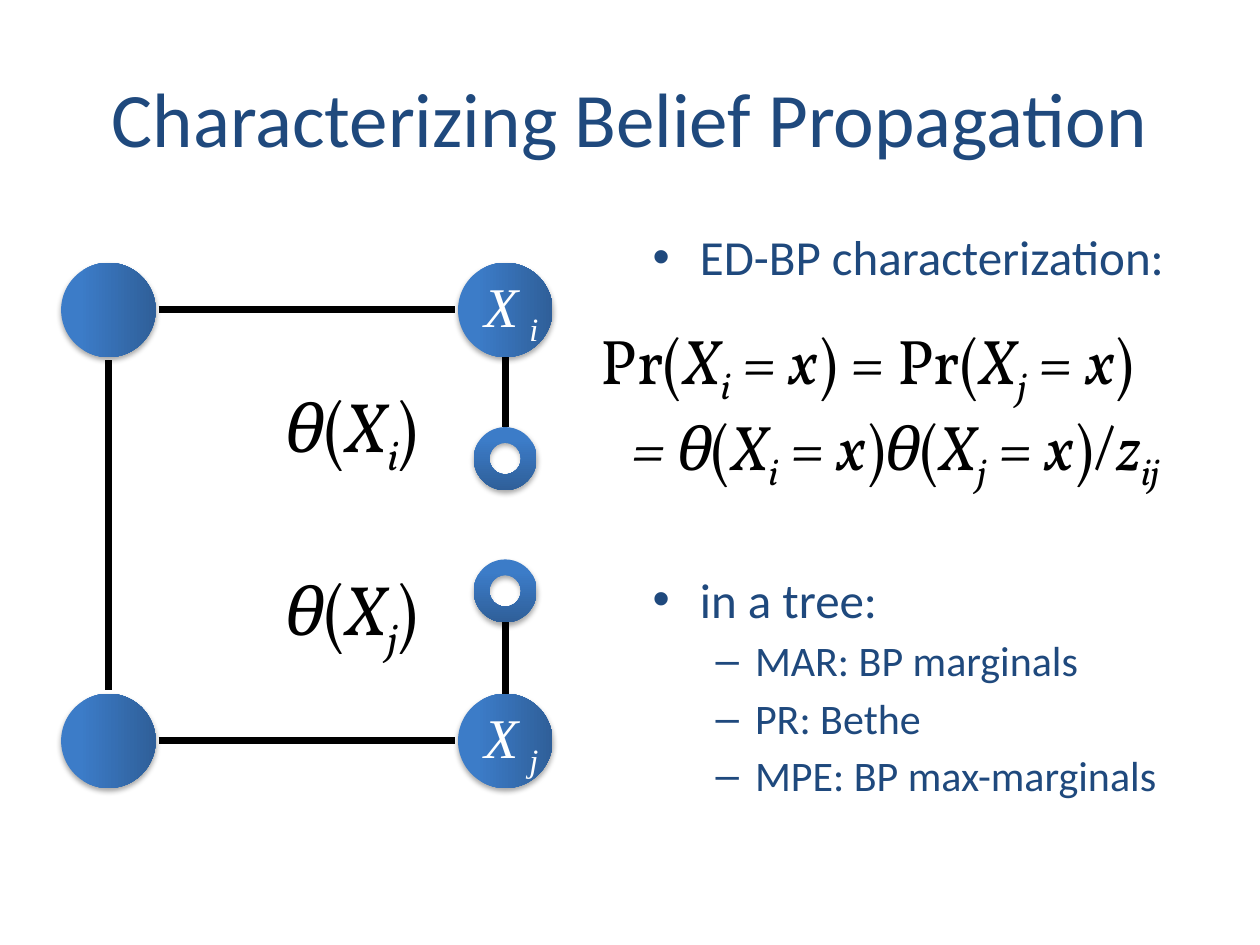
from dataclasses import dataclass

from lxml import etree
from pptx import Presentation
from pptx.dml.color import RGBColor
from pptx.enum.shapes import MSO_CONNECTOR, MSO_SHAPE
from pptx.enum.text import MSO_ANCHOR, MSO_AUTO_SIZE, PP_ALIGN
from pptx.oxml import parse_xml
from pptx.oxml.ns import qn
from pptx.util import Inches, Pt

STRAIGHT = MSO_CONNECTOR.STRAIGHT
ELLIPSE, DONUT = MSO_SHAPE.OVAL, MSO_SHAPE.DONUT
CENTER, MIDDLE = PP_ALIGN.CENTER, MSO_ANCHOR.MIDDLE
ROMAN, ITALIC, SUBSCRIPT = "roman", "italic", "subscript"


@dataclass(frozen=True)
class Theme:
    heading: RGBColor = RGBColor(0x1F, 0x49, 0x7D)
    ink: RGBColor = RGBColor(0, 0, 0)
    light: RGBColor = RGBColor(0xFF, 0xFF, 0xFF)
    node_bright: RGBColor = RGBColor(0x3C, 0x7C, 0xC8)
    node_dark: RGBColor = RGBColor(0x2F, 0x5F, 0x99)
    text_font: str = "Calibri"
    node_font: str = "Times New Roman"
    math_font: str = "Vollkorn"
    title_size: int = 44
    list_sizes: tuple = (28, 24)
    node_size: int = 32
    potential_size: int = 40
    equation_size: int = 36
    line_width: int = 4


theme = Theme()
SHADOW = (
    '<a:outerShdw xmlns:a="http://schemas.openxmlformats.org/drawingml/2006/main" '
    'blurRad="40000" dist="23000" dir="5400000" rotWithShape="0">'
    '<a:srgbClr val="000000"><a:alpha val="35000"/></a:srgbClr></a:outerShdw>'
)


def write(paragraph, text, size, font, color, style=ROMAN, spacing=0):
    run = paragraph.add_run()
    run.text = text
    run.font.size = Pt(size)
    run.font.name = font
    run.font.color.rgb = color
    run.font.italic = style != ROMAN
    properties = run.font._element
    if style == SUBSCRIPT:
        properties.set("baseline", "-25000")
    if spacing:
        properties.set("spc", str(spacing * 100))


def add_node(kind, center_x, center_y, diameter, gradient_angle):
    """Add a shaded circle or ring around the given centre."""
    shape = slide.shapes.add_shape(
        kind, Inches(center_x - diameter / 2), Inches(center_y - diameter / 2),
        Inches(diameter), Inches(diameter))
    shape.fill.gradient()
    shape.fill.gradient_angle = gradient_angle
    bright, dark = shape.fill.gradient_stops
    bright.color.rgb, bright.position = theme.node_bright, 0.2
    dark.color.rgb, dark.position = theme.node_dark, 1
    shape.line.fill.background()
    shape.shadow.inherit = False
    shape._element.spPr.find(qn("a:effectLst")).append(parse_xml(SHADOW))
    return shape


presentation = Presentation()
presentation.slide_width, presentation.slide_height = Inches(10), Inches(7.5)
slide = presentation.slides.add_slide(presentation.slide_layouts[1])

# Title
title = slide.shapes.title
title.left, title.top = Inches(0.5), Inches(0.3)
title.width, title.height = Inches(9), Inches(1.25)
write(title.text_frame.paragraphs[0], "Characterizing Belief Propagation",
      theme.title_size, theme.text_font, theme.heading)

# List: the large space before "in a tree:" leaves room for the equations
body = slide.placeholders[1]
body.left, body.top = Inches(5.08), Inches(1.75)
body.width, body.height = Inches(4.42), Inches(5.25)
items = [
    ("ED-BP characterization:", 0, 5),
    ("in a tree:", 0, 162),
    ("MAR: BP marginals", 1, 4),
    ("PR: Bethe", 1, 4),
    ("MPE: BP max-marginals", 1, 4),
]
for index, (text, level, space_before) in enumerate(items):
    frame = body.text_frame
    paragraph = frame.add_paragraph() if index else frame.paragraphs[0]
    paragraph.level = level
    paragraph.space_before = Pt(space_before)
    write(paragraph, text, theme.list_sizes[level], theme.text_font, theme.heading)

# Graph: four corner nodes, and a ring for each half of the split edge
left_x, right_x = 0.86, 4.01
top_y, bottom_y = 2.46, 5.88
node_diameter, ring_diameter = 0.75, 0.5
ring_top_y, ring_bottom_y = 3.64, 4.69
node_radius, ring_radius = node_diameter / 2, ring_diameter / 2
edge_gap = 0.4

for center_x, center_y, subscript in [
    (left_x, top_y, None), (left_x, bottom_y, None),
    (right_x, top_y, "i"), (right_x, bottom_y, "j"),
]:
    node = add_node(ELLIPSE, center_x, center_y, node_diameter, 0)
    if subscript:
        frame = node.text_frame
        frame.word_wrap = False
        frame.vertical_anchor = MIDDLE
        frame.margin_left, frame.margin_right = Inches(0.1), 0
        frame.margin_top = frame.margin_bottom = 0
        paragraph = frame.paragraphs[0]
        paragraph.alignment = CENTER
        label_format = dict(size=theme.node_size, font=theme.node_font, color=theme.light)
        write(paragraph, "X", style=ITALIC, spacing=6, **label_format)
        write(paragraph, subscript, style=SUBSCRIPT, **label_format)

for center_y in (ring_top_y, ring_bottom_y):
    add_node(DONUT, right_x, center_y, ring_diameter, 270)

edges = [
    (left_x, top_y + edge_gap, left_x, bottom_y - edge_gap),
    (left_x + edge_gap, top_y, right_x - edge_gap, top_y),
    (left_x + edge_gap, bottom_y, right_x - edge_gap, bottom_y),
    (right_x, ring_top_y - ring_radius, right_x, top_y + node_radius),
    (right_x, bottom_y - node_radius, right_x, ring_bottom_y + ring_radius),
]
for edge in edges:
    connector = slide.shapes.add_connector(STRAIGHT, *map(Inches, edge))
    connector.line.color.rgb = theme.ink
    connector.line.width = Pt(theme.line_width)
    etree.SubElement(connector._element.spPr, qn("a:effectLst"))

# Formulas: each line is an indent and its styled pieces
x_i = [("X", ITALIC), ("i", SUBSCRIPT)]
x_j = [("X", ITALIC), ("j", SUBSCRIPT)]
equals_x = [(" = ", ROMAN), ("x", ITALIC)]
theta = [("θ", ITALIC), ("(", ROMAN)]
close = [(")", ROMAN)]
marginals = [("Pr(", ROMAN), *x_i, *equals_x, (") = Pr(", ROMAN), *x_j, *equals_x, *close]
product = [("= ", ITALIC), *theta, *x_i, *equals_x, *close, *theta, *x_j, *equals_x,
           (")/", ROMAN), ("z", ITALIC), ("ij", SUBSCRIPT)]
formulas = [
    ((2.17, 2.99, 1.39, 0.77), theme.potential_size, [(0, theta + x_i + close)]),
    ((2.17, 4.44, 1.37, 0.77), theme.potential_size, [(0, theta + x_j + close)]),
    ((4.67, 2.5, 5.25, 1.31), theme.equation_size, [(0, marginals), (0.24, product)]),
]
for box, size, lines in formulas:
    frame = slide.shapes.add_textbox(*map(Inches, box)).text_frame
    frame.word_wrap = False
    frame.auto_size = MSO_AUTO_SIZE.SHAPE_TO_FIT_TEXT
    for index, (indent, pieces) in enumerate(lines):
        paragraph = frame.add_paragraph() if index else frame.paragraphs[0]
        if indent:
            paragraph._p.get_or_add_pPr().set("marL", str(Inches(indent)))
        for text, style in pieces:
            write(paragraph, text, size, theme.math_font, theme.ink, style=style)

presentation.save("out.pptx")
